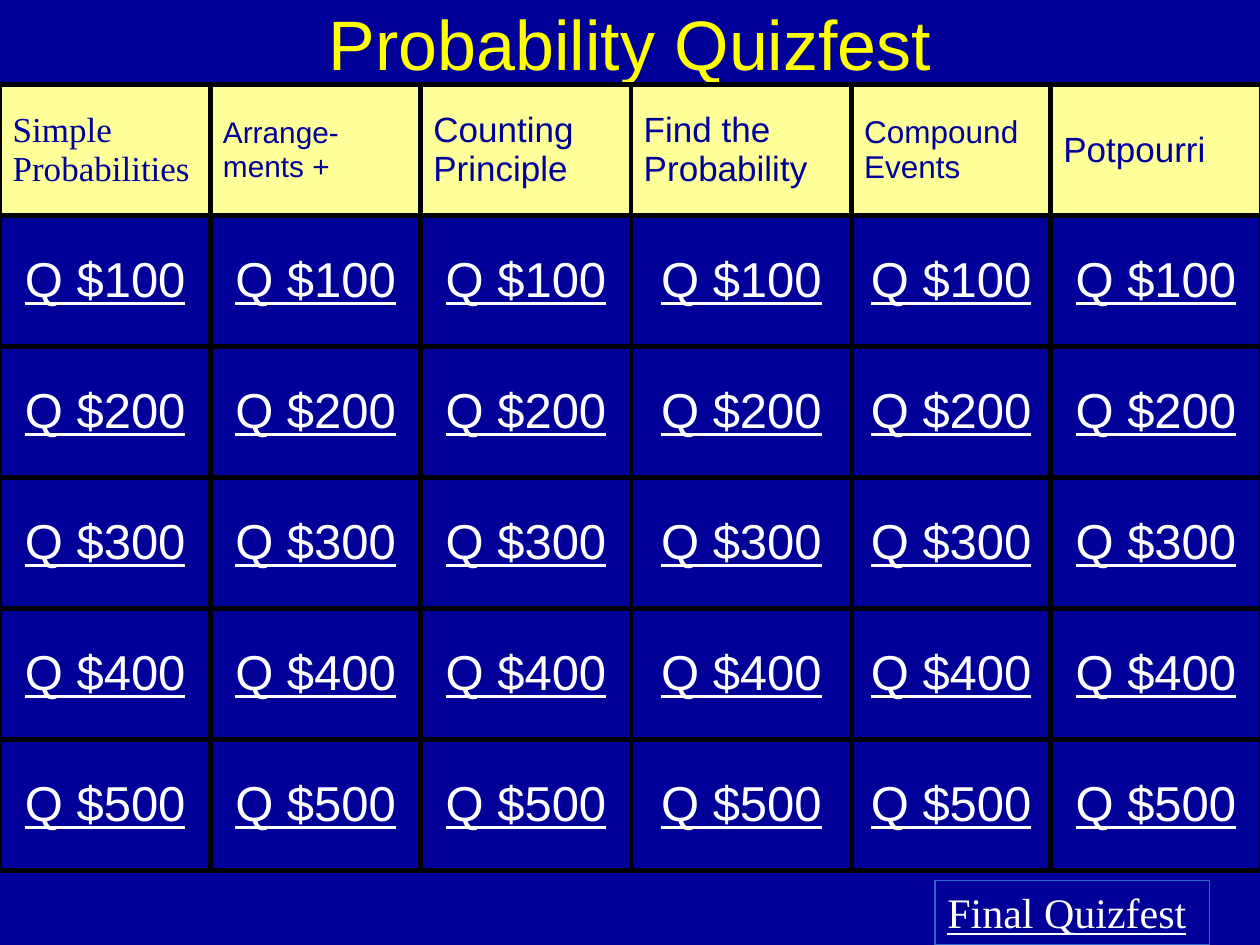
from dataclasses import dataclass

from lxml import etree
from pptx import Presentation
from pptx.dml.color import RGBColor
from pptx.enum.shapes import MSO_SHAPE
from pptx.enum.text import MSO_ANCHOR, PP_ALIGN
from pptx.oxml.ns import qn
from pptx.util import Inches, Pt

RECT = MSO_SHAPE.RECTANGLE
MIDDLE = MSO_ANCHOR.MIDDLE
LEFT, CENTER = PP_ALIGN.LEFT, PP_ALIGN.CENTER


@dataclass(frozen=True)
class Theme:
    navy: str = "000099"
    cream: str = "FFFF99"
    yellow: str = "FFFF00"
    white: str = "FFFFFF"
    black: str = "000000"
    blue: str = "3366CC"
    sans: str = "Arial"
    serif: str = "Times New Roman"
    title: int = 40
    prize: int = 28
    final: int = 24
    head: int = 20
    mid: int = 18
    small: int = 17
    border: int = 3


THEME = Theme()
HEADS = [
    ("Simple Probabilities", THEME.head, THEME.serif),
    ("Arrange-ments +", THEME.small, THEME.sans),
    ("Counting Principle", THEME.head, THEME.sans),
    ("Find the Probability", THEME.head, THEME.sans),
    ("Compound Events", THEME.mid, THEME.sans),
    ("Potpourri", THEME.head, THEME.sans),
]
PRIZES = range(100, 600, 100)
WIDTHS = [1.67, 1.67, 1.67, 1.75, 1.58, 1.67]
ROW = 1.04


def color(code):
    return RGBColor.from_string(code)


def add_run(frame, text, size, face, tint, align=LEFT, under=None):
    para = frame.paragraphs[0]
    para.alignment = align
    run = para.add_run()
    run.text = text
    font = run.font
    font.size = Pt(size)
    font.name = face
    font.color.rgb = color(tint)
    font.underline = under
    return para


def add_title(slide, text):
    box = slide.shapes.add_textbox(Inches(0.75), 0, Inches(8.5), Inches(0.67))
    frame = box.text_frame
    frame.word_wrap = True
    frame.vertical_anchor = MIDDLE
    add_run(frame, text, THEME.title, THEME.sans, THEME.yellow, CENTER)


def add_button(slide, text):
    box = slide.shapes.add_shape(
        RECT, Inches(7.42), Inches(6.99), Inches(2.18), Inches(0.51))
    box.shadow.inherit = False
    box.fill.background()
    box.line.color.rgb = color(THEME.blue)
    box.line.width = Pt(0.75)
    frame = box.text_frame
    frame.word_wrap = False
    frame.vertical_anchor = MSO_ANCHOR.TOP
    add_run(frame, text, THEME.final, THEME.serif, THEME.white, under=True)


def add_edges(cell):
    props = cell._tc.get_or_add_tcPr()
    for side in ("lnL", "lnR", "lnT", "lnB"):
        line = etree.SubElement(
            props, qn(f"a:{side}"), w=str(Pt(THEME.border)))
        fill = etree.SubElement(line, qn("a:solidFill"))
        etree.SubElement(fill, qn("a:srgbClr"), val=THEME.black)


def fill_cell(cell, text, size, face, tint, align=LEFT, under=None):
    cell.vertical_anchor = MIDDLE
    add_edges(cell)
    para = add_run(cell.text_frame, text, size, face, tint, align, under)
    para.space_before = Pt(size * 0.2)


def add_board(slide):
    count = len(PRIZES) + 1
    table = slide.shapes.add_table(
        count, len(HEADS), 0, Inches(0.67),
        Inches(10), Inches(ROW * count)).table
    table.first_row = False
    table.horz_banding = False
    for row in table.rows:
        row.height = Inches(ROW)
    for col, (text, size, face) in enumerate(HEADS):
        table.columns[col].width = Inches(WIDTHS[col])
        head = table.cell(0, col)
        fill_cell(head, text, size, face, THEME.navy)
        head.fill.solid()
        head.fill.fore_color.rgb = color(THEME.cream)
        for row, prize in enumerate(PRIZES, 1):
            cell = table.cell(row, col)
            fill_cell(cell, f"Q ${prize}", THEME.prize, THEME.sans,
                      THEME.white, CENTER, True)
            cell.fill.background()


def main():
    deck = Presentation()
    deck.slide_width = Inches(10)
    deck.slide_height = Inches(7.5)
    slide = deck.slides.add_slide(deck.slide_layouts[6])
    back = slide.background.fill
    back.solid()
    back.fore_color.rgb = color(THEME.navy)
    add_title(slide, "Probability Quizfest")
    add_button(slide, "Final Quizfest")
    add_board(slide)
    deck.save("out.pptx")


if __name__ == "__main__":
    main()
